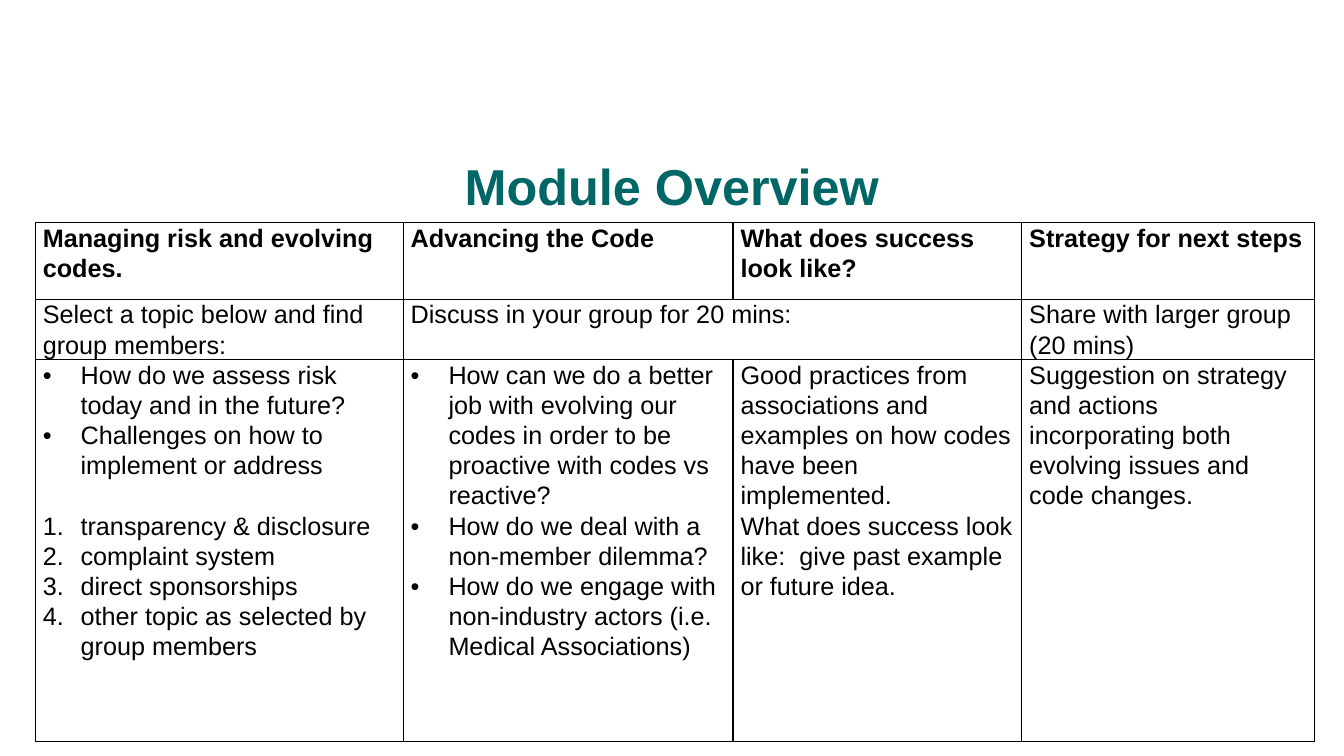
from lxml import etree
from pptx import Presentation
from pptx.dml.color import RGBColor
from pptx.enum import text
from pptx.oxml import ns
from pptx.util import Pt

FONT = "Arial"
INK = "000000"
TEAL = "006666"
COLUMN_WIDTHS = [262.8, 235.6, 206.2, 209.4]
ROW_HEIGHTS = [54.6, 36.7, 272.9]

HEADINGS = ["Managing risk and evolving codes.", "Advancing the Code",
            "What does success look like?", "Strategy for next steps"]
TASKS = {0: "Select a topic below and find group members:",
         1: "Discuss in your group for 20 mins:",
         3: "Share with larger group (20 mins)"}
RISK_QUESTIONS = ["How do we assess risk today and in the future?",
                  "Challenges on how to implement or address"]
TOPICS = ["transparency & disclosure", "complaint system",
          "direct sponsorships", "other topic as selected by group members"]
CODE_QUESTIONS = [
    "How can we do a better job with evolving our codes in order to be "
    "proactive with codes vs reactive?",
    "How do we deal with a non-member dilemma?",
    "How do we engage with non-industry actors (i.e. Medical Associations)"]
SUCCESS = ["Good practices from associations and examples on how codes have "
           "been implemented.",
           "What does success look like:  give past example or future idea."]
STRATEGY = ["Suggestion on strategy and actions incorporating both evolving "
            "issues and code changes."]


def colour(value):
    return RGBColor.from_string(value)


def add_marker(para, marker):
    """Give a paragraph a bullet or an automatic number with a hanging indent."""
    props = para._p.get_or_add_pPr()
    props.set("marL", str(Pt(27)))
    props.set("indent", str(-Pt(27)))
    etree.SubElement(props, ns.qn("a:buFont"), typeface=FONT)
    if marker == "number":
        etree.SubElement(props, ns.qn("a:buAutoNum"), type="arabicPeriod")
    else:
        etree.SubElement(props, ns.qn("a:buChar"), char=marker)


def write(frame, words, size=18, bold=False, ink=INK, spacing=1.07,
          align=text.PP_ALIGN.LEFT, marker=None, before=0):
    """Fill the first paragraph if it is empty, otherwise add one."""
    para = frame.paragraphs[0]
    if para.runs:
        para = frame.add_paragraph()
    if marker:
        add_marker(para, marker)
    para.alignment = align
    para.line_spacing = spacing
    if before:
        para.space_before = Pt(before)
    span = para.add_run()
    span.text = words
    span.font.name = FONT
    span.font.size = Pt(size)
    span.font.bold = bold
    span.font.color.rgb = colour(ink)


def add_title(page, words):
    title = page.shapes.title
    title.left, title.top = Pt(0), Pt(109.4)
    title.width, title.height = Pt(960), Pt(66.2)
    frame = title.text_frame
    frame.vertical_anchor = text.MSO_ANCHOR.TOP
    frame.auto_size = text.MSO_AUTO_SIZE.NONE
    frame.margin_top = Pt(6.5)
    write(frame, words, size=36, bold=True, ink=TEAL, spacing=0.9,
          align=text.PP_ALIGN.CENTER)


def format_cell(cell):
    """Clear the fill, set the margins and draw all four borders."""
    cell.fill.background()
    cell.margin_left = cell.margin_right = Pt(5.4)
    cell.margin_top = cell.margin_bottom = Pt(0)
    props = cell._tc.get_or_add_tcPr()
    for place, side in enumerate(("lnL", "lnR", "lnT", "lnB")):
        line = etree.Element(ns.qn(f"a:{side}"), w=str(Pt(1)))
        fill = etree.SubElement(line, ns.qn("a:solidFill"))
        etree.SubElement(fill, ns.qn("a:srgbClr"), val=INK)
        props.insert(place, line)


def add_grid(page):
    shape = page.shapes.add_table(
        len(ROW_HEIGHTS), len(COLUMN_WIDTHS), Pt(25.2), Pt(159.1),
        Pt(sum(COLUMN_WIDTHS)), Pt(sum(ROW_HEIGHTS)))
    table = shape.table
    table.first_row = table.horz_banding = False
    for column, width in zip(table.columns, COLUMN_WIDTHS):
        column.width = Pt(width)
    for row, height in zip(table.rows, ROW_HEIGHTS):
        row.height = Pt(height)
        for cell in row.cells:
            format_cell(cell)
    table.cell(1, 1).merge(table.cell(1, 2))
    return table


def fill_grid(table):
    # Headings and tasks
    for column, heading in enumerate(HEADINGS):
        write(table.cell(0, column).text_frame, heading, bold=True)
    for column, task in TASKS.items():
        write(table.cell(1, column).text_frame, task)

    # Details, with the numbered topics one line below the questions
    details = [(RISK_QUESTIONS, "•"), (CODE_QUESTIONS, "•"),
               (SUCCESS, None), (STRATEGY, None)]
    for column, (lines, marker) in enumerate(details):
        for words in lines:
            write(table.cell(2, column).text_frame, words, marker=marker)
    for place, topic in enumerate(TOPICS):
        write(table.cell(2, 0).text_frame, topic, marker="number",
              before=0 if place else 21.6)


def main():
    deck = Presentation()
    deck.slide_width, deck.slide_height = Pt(960), Pt(540)
    page = deck.slides.add_slide(deck.slide_layouts[5])
    add_title(page, "Module Overview")
    fill_grid(add_grid(page))
    deck.save("out.pptx")


if __name__ == "__main__":
    main()
